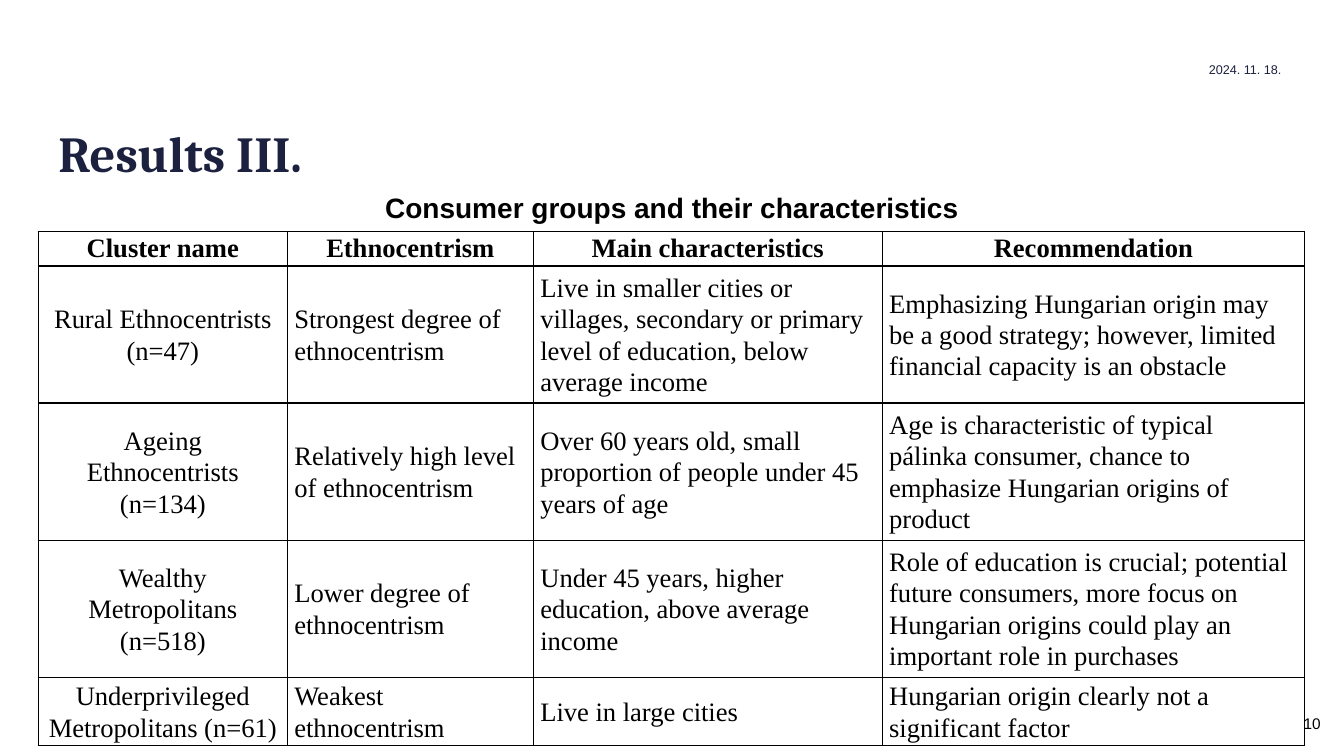
from dataclasses import dataclass

import pptx
import pptx.dml.color
import pptx.enum.shapes
import pptx.enum.text
import pptx.oxml
import pptx.oxml.ns
import pptx.util
from lxml import etree

ALIGN = pptx.enum.text.PP_ALIGN
ANCHOR = pptx.enum.text.MSO_ANCHOR

EMU_PER_PX = 9144  # 100 px to the inch
COLOURS = {"navy": "1B213E", "black": "000000", "white": "FFFFFF"}

COLUMN_WIDTHS = [247, 244, 346, 419]
ROW_HEIGHTS = [33, 136, 136, 136, 68]
CELL_FORMAT = {"line_spacing": 1.07, "space_after": pptx.util.Pt(8)}
CELL_MARGINS = {"margin_left": 7, "margin_right": 7, "margin_top": 0, "margin_bottom": 0}

CLUSTER_ROWS = [
    ("Cluster name", "Ethnocentrism", "Main characteristics", "Recommendation"),
    (
        "Rural Ethnocentrists (n=47)",
        "Strongest degree of ethnocentrism",
        "Live in smaller cities or villages, secondary or primary level of education, "
        "below average income",
        "Emphasizing Hungarian origin may be a good strategy; however, limited "
        "financial capacity is an obstacle",
    ),
    (
        "Ageing Ethnocentrists (n=134)",
        "Relatively high level of ethnocentrism",
        "Over 60 years old, small proportion of people under 45 years of age",
        "Age is characteristic of typical pálinka consumer, chance to emphasize "
        "Hungarian origins of product",
    ),
    (
        "Wealthy Metropolitans (n=518)",
        "Lower degree of ethnocentrism",
        "Under 45 years, higher education, above average income",
        "Role of education is crucial; potential future consumers, more focus on "
        "Hungarian origins could play an important role in purchases",
    ),
    (
        "Underprivileged Metropolitans (n=61)",
        "Weakest ethnocentrism",
        "Live in large cities",
        "Hungarian origin clearly not a significant factor",
    ),
]


@dataclass(frozen=True)
class Style:
    size: int
    font: str
    colour: str = "black"
    bold: bool = False
    align: ALIGN = ALIGN.LEFT


@dataclass(frozen=True)
class Label:
    text: str
    box: tuple[int, int, int, int]
    style: Style
    anchor: ANCHOR = ANCHOR.TOP
    fill: str | None = None


LABELS = [
    Label("10", (1279, 695, 45, 46), Style(11, "Arial", align=ALIGN.CENTER), ANCHOR.MIDDLE, "white"),
    Label("Results III.", (58, 121, 1213, 76), Style(36, "Cambria", "navy", True)),
    Label(
        "Consumer groups and their characteristics",
        (181, 188, 971, 34),
        Style(20, "Arial", bold=True, align=ALIGN.CENTER),
        ANCHOR.BOTTOM,
    ),
    Label("2024. 11. 18.", (971, 61, 300, 20), Style(9, "Arial", "navy", align=ALIGN.RIGHT)),
]


def px(length: int) -> pptx.util.Emu:
    return pptx.util.Emu(length * EMU_PER_PX)


def rgb(name: str) -> pptx.dml.color.RGBColor:
    return pptx.dml.color.RGBColor.from_string(COLOURS[name])


def set_attributes(target: object, values: dict) -> None:
    for name, value in values.items():
        setattr(target, name, value)


def write_text(text_frame: pptx.text.text.TextFrame, text: str, style: Style) -> None:
    paragraph = text_frame.paragraphs[0]
    paragraph.alignment = style.align
    run = paragraph.add_run()
    run.text = text
    set_attributes(
        run.font,
        {"size": pptx.util.Pt(style.size), "name": style.font, "bold": style.bold},
    )
    run.font.color.rgb = rgb(style.colour)


def add_label(slide: pptx.slide.Slide, label: Label) -> None:
    box = [px(length) for length in label.box]
    if label.fill:
        shape = slide.shapes.add_shape(pptx.enum.shapes.MSO_SHAPE.RECTANGLE, *box)
        shape.shadow.inherit = False
        shape.fill.solid()
        shape.fill.fore_color.rgb = rgb(label.fill)
        shape.line.fill.background()
    else:
        shape = slide.shapes.add_textbox(*box)
    margins = dict.fromkeys(CELL_MARGINS, 0)
    set_attributes(
        shape.text_frame, margins | {"word_wrap": True, "vertical_anchor": label.anchor}
    )
    write_text(shape.text_frame, label.text, label.style)


def add_borders(cell: pptx.table._Cell) -> None:
    """Draw a 1 pt black line on all four sides of the cell."""
    qn = pptx.oxml.ns.qn
    properties = cell._tc.get_or_add_tcPr()
    for side in ("lnL", "lnR", "lnT", "lnB"):
        line = etree.SubElement(properties, qn(f"a:{side}"), w=str(pptx.util.Pt(1)))
        fill = etree.SubElement(line, qn("a:solidFill"))
        etree.SubElement(fill, qn("a:srgbClr"), val=COLOURS["black"])


def add_cluster_table(slide: pptx.slide.Slide) -> None:
    table = slide.shapes.add_table(
        len(ROW_HEIGHTS),
        len(COLUMN_WIDTHS),
        px(38),
        px(230),
        px(sum(COLUMN_WIDTHS)),
        px(sum(ROW_HEIGHTS)),
    ).table
    set_attributes(table, {"first_row": False, "horz_banding": False})
    for column, width in zip(table.columns, COLUMN_WIDTHS):
        column.width = px(width)
    for row_index, (row, height) in enumerate(zip(table.rows, ROW_HEIGHTS)):
        row.height = px(height)
        is_header = row_index == 0
        for column_index, cell in enumerate(row.cells):
            centred = is_header or column_index == 0
            style = Style(
                19,
                "Times New Roman",
                bold=is_header,
                align=ALIGN.CENTER if centred else ALIGN.LEFT,
            )
            set_attributes(cell, {side: px(gap) for side, gap in CELL_MARGINS.items()})
            cell.vertical_anchor = ANCHOR.TOP if is_header else ANCHOR.MIDDLE
            write_text(cell.text_frame, CLUSTER_ROWS[row_index][column_index], style)
            set_attributes(cell.text_frame.paragraphs[0], CELL_FORMAT)
            add_borders(cell)
            cell.fill.background()


def main() -> None:
    presentation = pptx.Presentation()
    set_attributes(presentation, {"slide_width": px(1333), "slide_height": px(750)})
    slide = presentation.slides.add_slide(presentation.slide_layouts[6])
    for label in LABELS:
        add_label(slide, label)
    add_cluster_table(slide)
    presentation.save("out.pptx")


if __name__ == "__main__":
    main()
